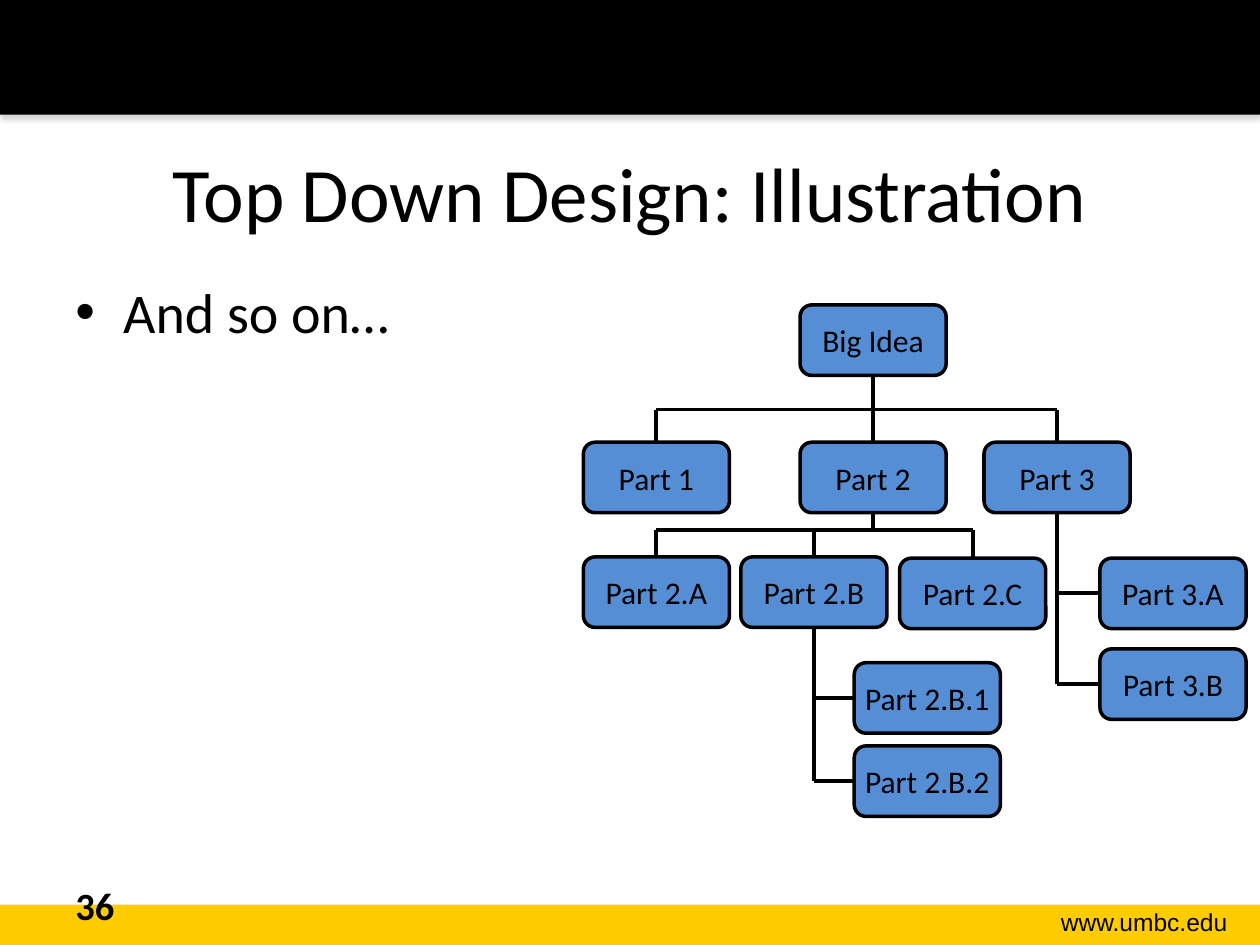
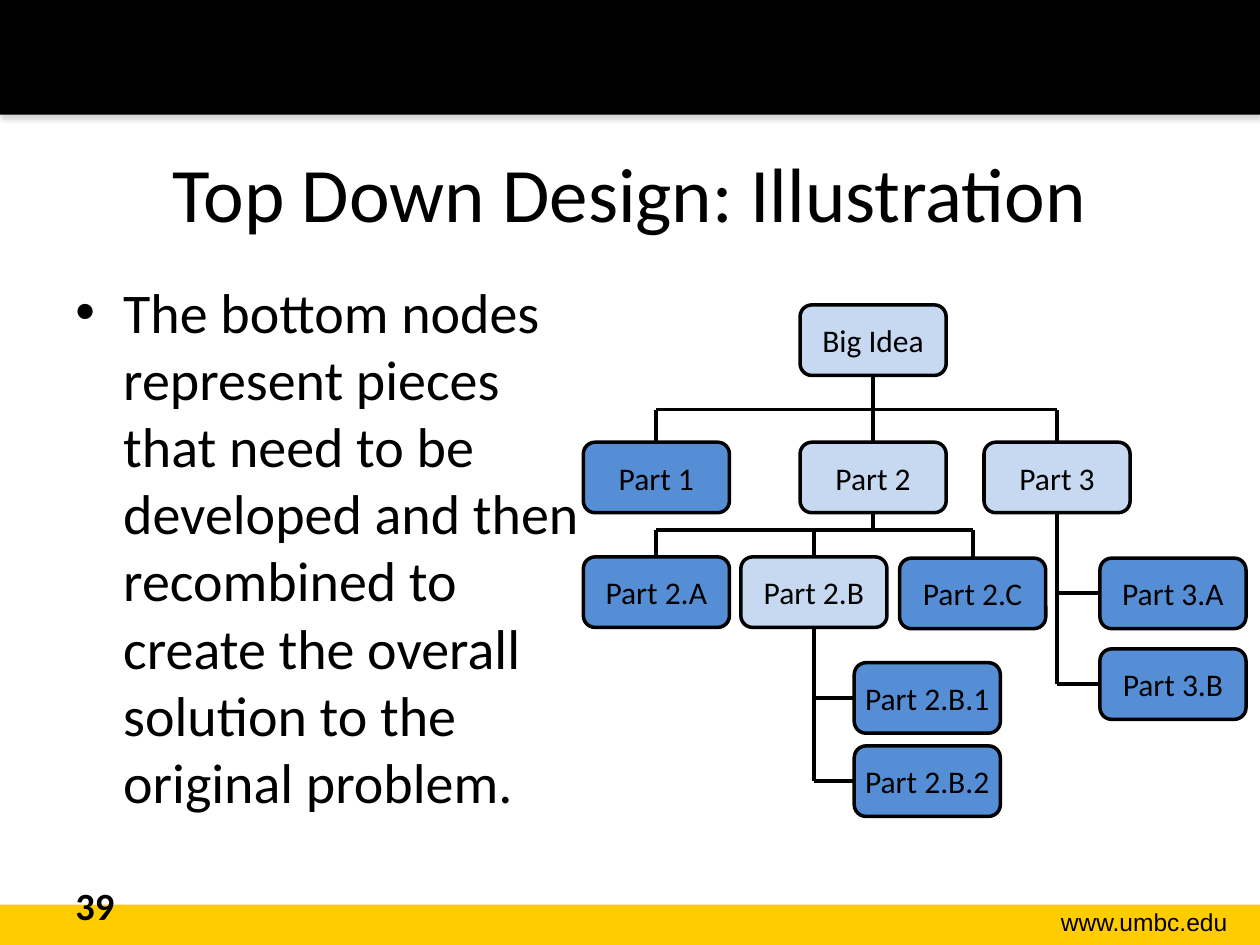
from lxml.etree import SubElement
from pptx import Presentation
from pptx.dml.color import RGBColor
from pptx.enum.shapes import MSO_CONNECTOR, MSO_SHAPE
from pptx.enum.text import MSO_ANCHOR, PP_ALIGN
from pptx.oxml.ns import qn
from pptx.util import Pt

SCALE = 9144
BLACK = RGBColor(0, 0, 0)
GOLD = RGBColor(0xFF, 0xCC, 0x00)
NODE_BLUE = RGBColor(0x55, 0x8E, 0xD5)
PALE_BLUE = RGBColor(0xC6, 0xD9, 0xF1)

TITLE = "Top Down Design: Illustration"
TITLE_FONT = {"size": Pt(44), "name": "Calibri"}
BODY_FONT = {"size": Pt(32), "name": "Calibri"}
NUMBER_FONT = {"size": Pt(22), "name": "Calibri", "bold": True}
ADDRESS_FONT = {"size": Pt(14), "name": "Arial"}
NODE_FONT = {"size": Pt(18), "name": "Calibri"}

NODE_WIDTH, NODE_HEIGHT = 116, 56
NODES = {
    "Big Idea": (172, 0),
    "Part 1": (0, 109),
    "Part 2": (172, 109),
    "Part 3": (318, 109),
    "Part 2.A": (0, 200),
    "Part 2.B": (125, 200),
    "Part 2.C": (251, 201),
    "Part 3.A": (410, 201),
    "Part 3.B": (410, 273),
    "Part 2.B.1": (215, 284),
    "Part 2.B.2": (215, 350),
}
ROWS_BELOW = {
    "Big Idea": (83, ["Part 1", "Part 2", "Part 3"]),
    "Part 2": (179, ["Part 2.A", "Part 2.B", "Part 2.C"]),
}
STACKS_BELOW = {
    "Part 3": ["Part 3.A", "Part 3.B"],
    "Part 2.B": ["Part 2.B.1", "Part 2.B.2"],
}
BRANCHING = {*ROWS_BELOW, *STACKS_BELOW}

SLIDES = [
    ("36", "And so on…", False),
    ("39", "The bottom nodes represent pieces that need to be developed and "
           "then recombined to create the overall solution to the original problem.", True),
]


def px(*lengths):
    return [length * SCALE for length in lengths]


def write(shape, text, font, align=PP_ALIGN.LEFT, anchor=MSO_ANCHOR.TOP, wrap=True, bullet=False):
    frame = shape.text_frame
    frame.word_wrap = wrap
    frame.vertical_anchor = anchor
    paragraph = frame.paragraphs[0]
    paragraph.text = text
    paragraph.alignment = align
    if bullet:
        properties = paragraph._p.get_or_add_pPr()
        for name, indent in {"marL": 38, "indent": -38}.items():
            properties.set(name, str(indent * SCALE))
        SubElement(properties, qn("a:buFont"), typeface="Arial")
        SubElement(properties, qn("a:buChar"), char="•")
    run_font = paragraph.runs[0].font
    for name, value in font.items():
        setattr(run_font, name, value)
    run_font.color.rgb = BLACK


def add_text(slide, box, text, font, **layout):
    write(slide.shapes.add_textbox(*px(*box)), text, font, **layout)


def add_filled(shapes, kind, box, color):
    shape = shapes.add_shape(kind, *px(*box))
    shape.shadow.inherit = False
    shape.fill.solid()
    shape.fill.fore_color.rgb = color
    shape.line.fill.background()
    return shape


def add_line(shapes, *ends):
    connector = shapes.add_connector(MSO_CONNECTOR.STRAIGHT, *px(*ends))
    connector.line.color.rgb = BLACK
    connector.line.width = Pt(2.25)
    SubElement(connector._element.spPr, qn("a:effectLst"))


def add_bands(slide):
    add_filled(slide.shapes, MSO_SHAPE.RECTANGLE, (0, 718, 1000, 32), GOLD)
    header = add_filled(slide.shapes, MSO_SHAPE.RECTANGLE, (0, 0, 1000, 91), BLACK)
    effects = header._element.spPr.find(qn("a:effectLst"))
    shadow = SubElement(effects, qn("a:outerShdw"), blurRad=str(Pt(3.1)),
                        dist=str(Pt(1.8)), dir="5400000", rotWithShape="0")
    color = SubElement(shadow, qn("a:srgbClr"), val="808080")
    SubElement(color, qn("a:alpha"), val="35000")
    add_text(slide, (785, 715, 199, 34), "www.umbc.edu", ADDRESS_FONT, align=PP_ALIGN.RIGHT)


def add_tree(shapes, left, top, highlight_leaves):
    def center(label):
        return left + NODES[label][0] + NODE_WIDTH // 2

    def middle(label):
        return top + NODES[label][1] + NODE_HEIGHT // 2

    def bottom(label):
        return top + NODES[label][1] + NODE_HEIGHT

    for parent, (bus_offset, children) in ROWS_BELOW.items():
        bus = top + bus_offset
        add_line(shapes, center(parent), bottom(parent), center(parent), bus)
        add_line(shapes, center(children[0]), bus, center(children[-1]), bus)
        for child in children:
            add_line(shapes, center(child), bus, center(child), top + NODES[child][1])

    for parent, children in STACKS_BELOW.items():
        add_line(shapes, center(parent), bottom(parent), center(parent), middle(children[-1]))
        for child in children:
            add_line(shapes, center(parent), middle(child), left + NODES[child][0], middle(child))

    for label, (x, y) in NODES.items():
        color = PALE_BLUE if highlight_leaves and label in BRANCHING else NODE_BLUE
        box = (left + x, top + y, NODE_WIDTH, NODE_HEIGHT)
        node = add_filled(shapes, MSO_SHAPE.ROUNDED_RECTANGLE, box, color)
        node.line.color.rgb = BLACK
        node.line.width = Pt(2)
        write(node, label, NODE_FONT, align=PP_ALIGN.CENTER, anchor=MSO_ANCHOR.MIDDLE, wrap=False)


def add_design_slide(presentation, number, body, highlight_leaves):
    slide = presentation.slides.add_slide(presentation.slide_layouts[6])
    add_bands(slide)
    add_text(slide, (50, 90, 900, 125), TITLE, TITLE_FONT,
             align=PP_ALIGN.CENTER, anchor=MSO_ANCHOR.MIDDLE)
    add_text(slide, (50, 215, 433, 455), body, BODY_FONT, bullet=True)
    add_text(slide, (50, 695, 233, 40), number, NUMBER_FONT)
    shapes = slide.shapes.add_group_shape().shapes if highlight_leaves else slide.shapes
    add_tree(shapes, 463, 242, highlight_leaves)


def main():
    presentation = Presentation()
    presentation.slide_width, presentation.slide_height = px(1000, 750)
    for content in SLIDES:
        add_design_slide(presentation, *content)
    presentation.save("out.pptx")


if __name__ == "__main__":
    main()
